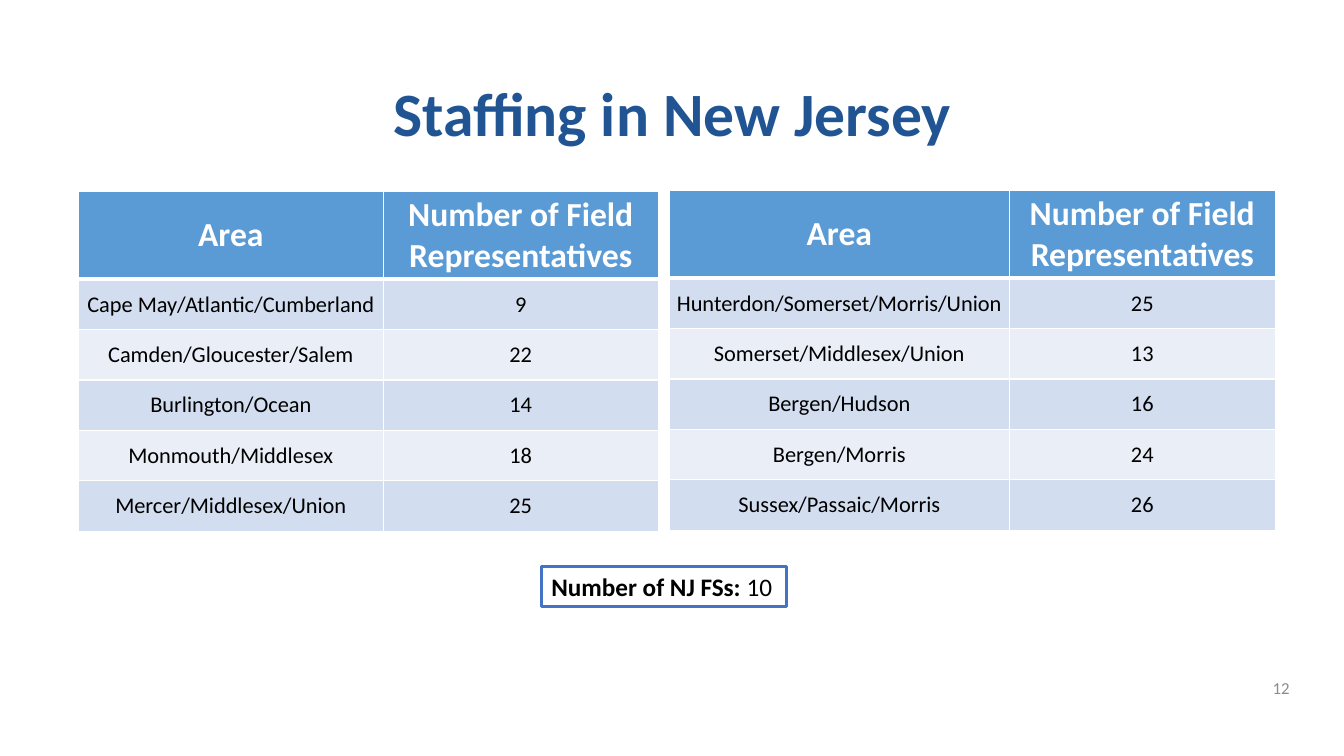
import pptx
import pptx.util
import pptx.dml.color
import pptx.enum.shapes
import pptx.enum.text
import pptx.oxml
import pptx.oxml.ns

Inches, Pt = pptx.util.Inches, pptx.util.Pt
ALIGN = pptx.enum.text.PP_ALIGN
ANCHOR = pptx.enum.text.MSO_ANCHOR

COLORS = {
    "title": "215493",
    "header": "5B9BD5",
    "band_dark": "D2DEEF",
    "band_light": "EAEFF7",
    "white": "FFFFFF",
    "black": "000000",
    "box_line": "4472C4",
    "page_number": "8C8C8C",
}


def rgb(name):
    return pptx.dml.color.RGBColor.from_string(COLORS[name])


def add_text(paragraph, text, size=18, color="black", bold=False, align=ALIGN.LEFT, font="Calibri"):
    paragraph.alignment = align
    run = paragraph.add_run()
    run.text = text
    run.font.name = font
    run.font.size = Pt(size)
    run.font.bold = bold
    run.font.color.rgb = rgb(color)


class StaffingSlide:
    def __init__(self, presentation):
        self.slide = presentation.slides.add_slide(presentation.slide_layouts[6])

    def text_box(self, left, top, width, height, text, anchor=ANCHOR.TOP, line_spacing=1.0, **style):
        box = self.slide.shapes.add_textbox(Inches(left), Inches(top), Inches(width), Inches(height))
        frame = box.text_frame
        frame.word_wrap = True
        frame.vertical_anchor = anchor
        paragraph = frame.paragraphs[0]
        paragraph.line_spacing = line_spacing
        add_text(paragraph, text, **style)

    def outlined_box(self, left, top, width, height, label, value):
        shape = self.slide.shapes.add_shape(
            pptx.enum.shapes.MSO_SHAPE.RECTANGLE,
            Inches(left), Inches(top), Inches(width), Inches(height))
        shape.shadow.inherit = False
        shape.fill.background()
        shape.line.color.rgb = rgb("box_line")
        shape.line.width = Pt(2.25)
        frame = shape.text_frame
        frame.word_wrap = True
        frame.vertical_anchor = ANCHOR.TOP
        add_text(frame.paragraphs[0], label, bold=True)
        add_text(frame.paragraphs[0], value)

    def cell_borders(self, cell, bottom, top):
        properties = cell._tc.get_or_add_tcPr()
        for side, width in (("L", 1), ("R", 1), ("T", top), ("B", bottom)):
            properties.append(pptx.oxml.parse_xml(
                f'<a:ln{side} {pptx.oxml.ns.nsdecls("a")} w="{Pt(width)}"><a:solidFill>'
                f'<a:srgbClr val="{COLORS["white"]}"/></a:solidFill></a:ln{side}>'))

    def table(self, left, top, column_widths, staffing):
        rows = [("Area", "Number of Field Representatives"), *staffing]
        row_heights = [0.87] + [0.5] * len(staffing)
        table = self.slide.shapes.add_table(
            len(rows), len(column_widths), Inches(left), Inches(top),
            Inches(sum(column_widths)), Inches(sum(row_heights))).table
        for column, width in zip(table.columns, column_widths):
            column.width = Inches(width)
        for index, values in enumerate(rows):
            table.rows[index].height = Inches(row_heights[index])
            is_header = index == 0
            band = "header" if is_header else "band_dark" if index % 2 else "band_light"
            for column_index, value in enumerate(values):
                cell = table.cell(index, column_index)
                cell.margin_left = cell.margin_right = 0
                cell.margin_top = cell.margin_bottom = 0
                cell.vertical_anchor = ANCHOR.MIDDLE
                self.cell_borders(cell, bottom=3 if is_header else 1, top=3 if index == 1 else 1)
                cell.fill.solid()
                cell.fill.fore_color.rgb = rgb(band)
                add_text(cell.text_frame.paragraphs[0], str(value), align=ALIGN.CENTER,
                         size=24 if is_header else 16, bold=is_header,
                         color="white" if is_header else "black")


def main():
    presentation = pptx.Presentation()
    presentation.slide_width = Inches(13.33)
    presentation.slide_height = Inches(7.5)
    staffing = StaffingSlide(presentation)

    # Page number and title
    staffing.text_box(9.89, 6.62, 3, 0.4, "12", anchor=ANCHOR.MIDDLE,
                      size=12, color="page_number", align=ALIGN.RIGHT)
    staffing.text_box(0.92, 0.78, 11.5, 1.45, "Staffing in New Jersey", line_spacing=0.9,
                      size=44, color="title", bold=True, align=ALIGN.CENTER)

    # Representatives by area
    staffing.table(0.78, 1.9, (3.02, 2.73), [
        ("Cape May/Atlantic/Cumberland", 9),
        ("Camden/Gloucester/Salem", 22),
        ("Burlington/Ocean", 14),
        ("Monmouth/Middlesex", 18),
        ("Mercer/Middlesex/Union", 25),
    ])
    staffing.table(6.64, 1.89, (3.37, 2.64), [
        ("Hunterdon/Somerset/Morris/Union", 25),
        ("Somerset/Middlesex/Union", 13),
        ("Bergen/Hudson", 16),
        ("Bergen/Morris", 24),
        ("Sussex/Passaic/Morris", 26),
    ])

    # State total
    staffing.outlined_box(5.37, 5.62, 2.43, 0.4, "Number of NJ FSs: ", "10")

    presentation.save("out.pptx")


if __name__ == "__main__":
    main()
